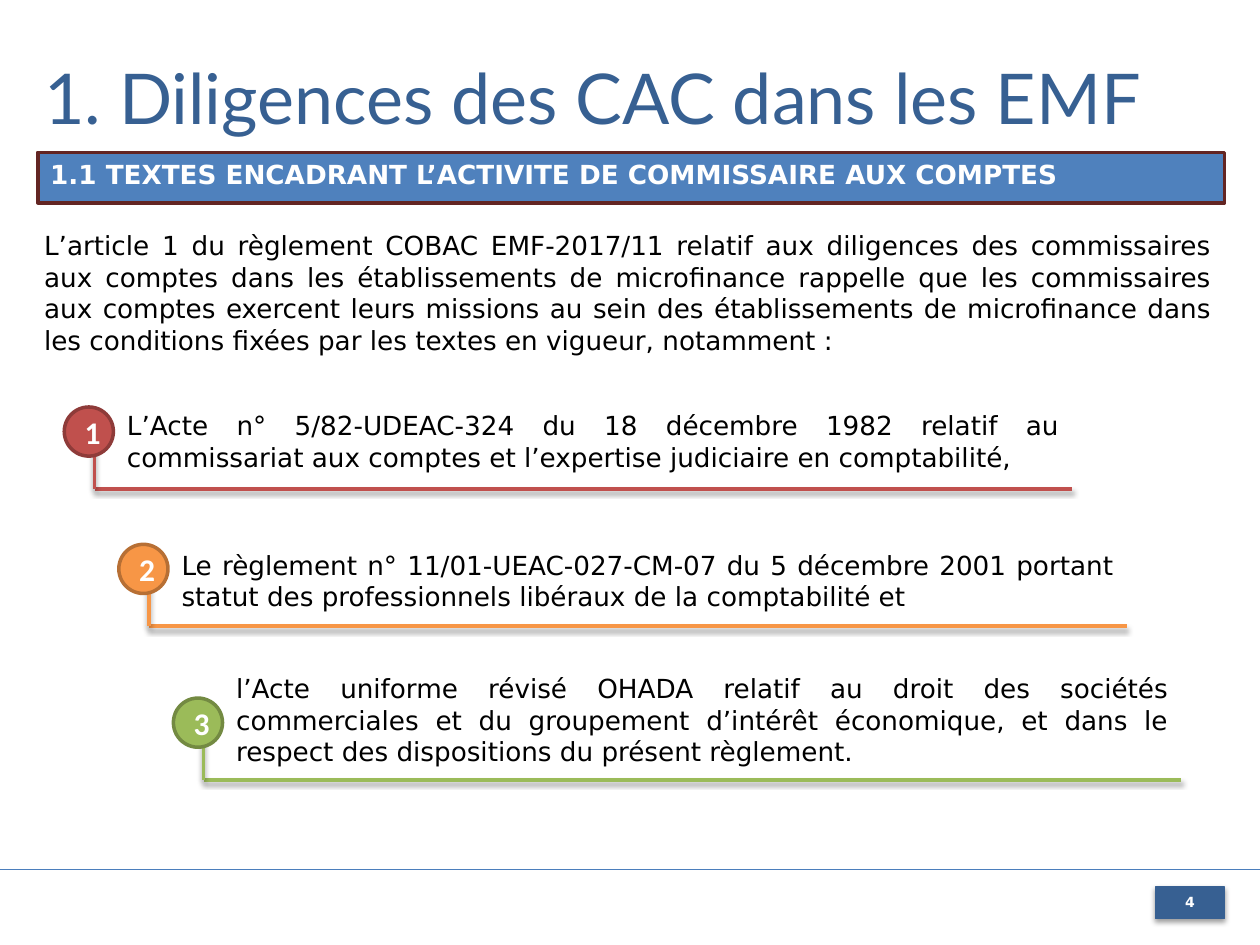
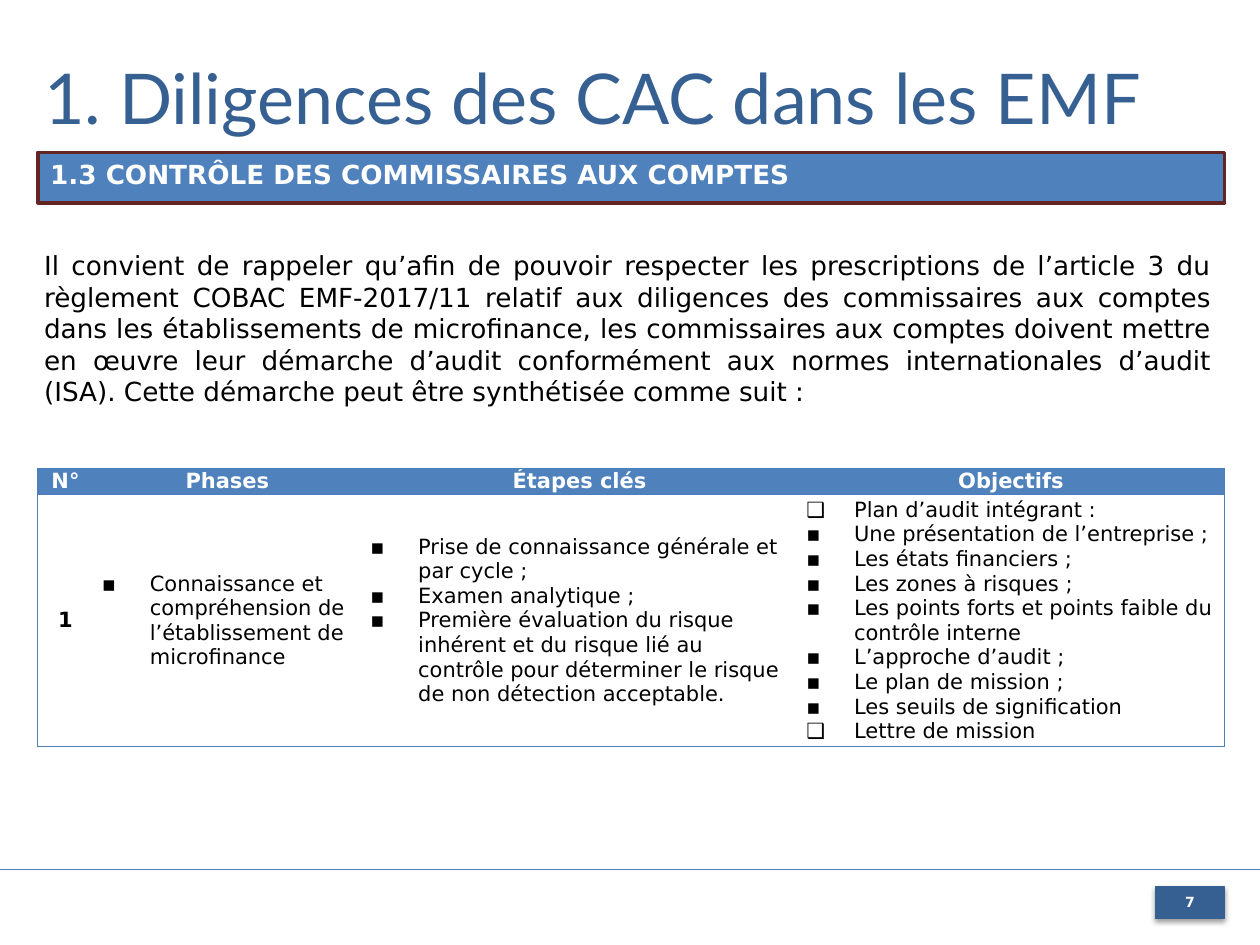
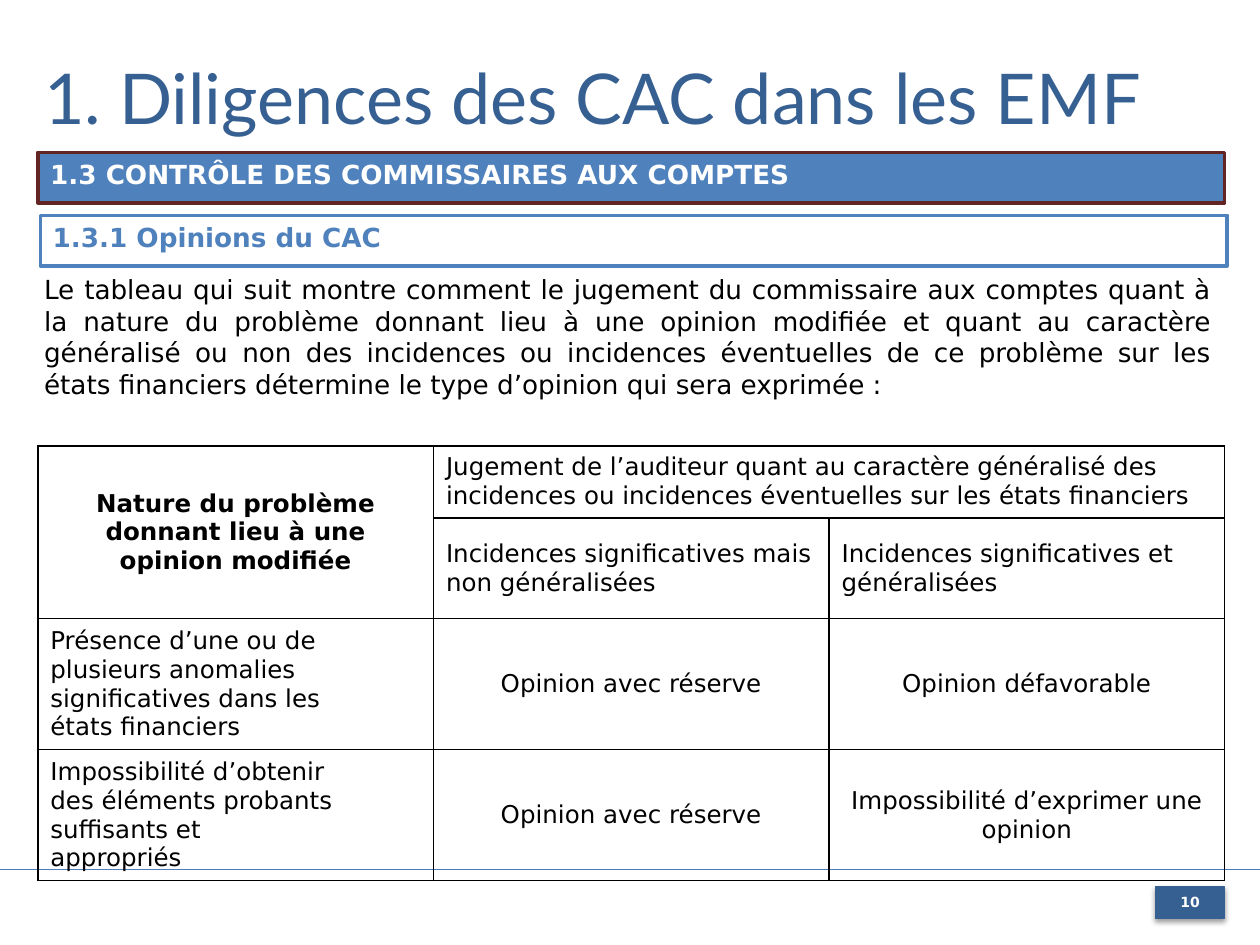
import pptx
import pptx.dml.color
import pptx.enum.shapes
import pptx.enum.text
import pptx.oxml.ns
import pptx.util
from lxml import etree

RGB = pptx.dml.color.RGBColor
Pt = pptx.util.Pt
qn = pptx.oxml.ns.qn
Shape = pptx.enum.shapes.MSO_SHAPE
Align = pptx.enum.text.PP_ALIGN
Anchor = pptx.enum.text.MSO_ANCHOR

WHITE = RGB(0xFF, 0xFF, 0xFF)
BLACK = RGB(0x00, 0x00, 0x00)
NAVY = RGB(0x37, 0x60, 0x92)
BLUE = RGB(0x4F, 0x81, 0xBD)
RULE_BLUE = RGB(0x4B, 0x7E, 0xBC)
MAROON = RGB(0x63, 0x25, 0x23)
RED = RGB(0xC0, 0x50, 0x4D)
DARK_RED = RGB(0x8E, 0x3B, 0x39)
ORANGE = RGB(0xF7, 0x96, 0x46)
DARK_ORANGE = RGB(0xB7, 0x6F, 0x34)
GREEN = RGB(0x9B, 0xBB, 0x59)
DARK_GREEN = RGB(0x73, 0x8A, 0x42)

TEXT_FONT = "DejaVu Sans"
TITLE_FONT = "Lato"
NUMBER_FONT = "Calibri"
BULLETS = "▪❑"
GRID_COLUMNS, GRID_ROWS = 100, 75
LEFT, WIDTH = 3, 94.2
PLAIN_TABLE = "{2D5ABB26-0587-4C30-8999-92F81FD0307C}"

TITLE = "1. Diligences des CAC dans les EMF"
CONTROL = "1.3 CONTRÔLE DES COMMISSAIRES AUX COMPTES"

TEXTS_INTRO = "L’article 1 du règlement COBAC EMF-2017/11 relatif aux diligences des commissaires aux comptes dans les établissements de microfinance rappelle que les commissaires aux comptes exercent leurs missions au sein des établissements de microfinance dans les conditions fixées par les textes en vigueur, notamment :"
LAWS = [
    ("L’Acte n° 5/82-UDEAC-324 du 18 décembre 1982 relatif au commissariat aux comptes et l’expertise judiciaire en comptabilité,",
     RED, DARK_RED, 38.8, 32),
    ("Le règlement n° 11/01-UEAC-027-CM-07 du 5 décembre 2001 portant statut des professionnels libéraux de la comptabilité et",
     ORANGE, DARK_ORANGE, 49.7, 43.1),
    ("l’Acte uniforme révisé OHADA relatif au droit des sociétés commerciales et du groupement d’intérêt économique, et dans le respect des dispositions du présent règlement.",
     GREEN, DARK_GREEN, 61.9, 52.9),
]

PHASES_INTRO = "Il convient de rappeler qu’afin de pouvoir respecter les prescriptions de l’article 3 du règlement COBAC EMF-2017/11 relatif aux diligences des commissaires aux comptes dans les établissements de microfinance, les commissaires aux comptes doivent mettre en œuvre leur démarche d’audit conformément aux normes internationales d’audit (ISA). Cette démarche peut être synthétisée comme suit :"
PHASES = [
    ["N°", "Phases", "Étapes clés", "Objectifs"],
    ["1",
     "▪Connaissance et compréhension de l’établissement de microfinance",
     "▪Prise de connaissance générale et par cycle ;\n"
     "▪Examen analytique ;\n"
     "▪Première évaluation du risque inhérent et du risque lié au contrôle pour déterminer le risque de non détection acceptable.",
     "❑Plan d’audit intégrant :\n"
     "▪Une présentation de l’entreprise ;\n"
     "▪Les états financiers ;\n"
     "▪Les zones à risques ;\n"
     "▪Les points forts et points faible du contrôle interne\n"
     "▪L’approche d’audit ;\n"
     "▪Le plan de mission ;\n"
     "▪Les seuils de signification\n"
     "❑Lettre de mission"],
]

OPINIONS_INTRO = "Le tableau qui suit montre comment le jugement du commissaire aux comptes quant à la nature du problème donnant lieu à une opinion modifiée et quant au caractère généralisé ou non des incidences ou incidences éventuelles de ce problème sur les états financiers détermine le type d’opinion qui sera exprimée :"
OPINIONS = [
    ["Nature du problème\ndonnant lieu à une\nopinion modifiée",
     "Jugement de l’auditeur quant au caractère généralisé des incidences ou incidences éventuelles sur les états financiers",
     ""],
    ["", "Incidences significatives mais non généralisées",
     "Incidences significatives et\ngénéralisées"],
    ["Présence d’une ou de\nplusieurs anomalies\nsignificatives dans les\nétats financiers",
     "Opinion avec réserve", "Opinion défavorable"],
    ["Impossibilité d’obtenir\ndes éléments probants\nsuffisants et\nappropriés",
     "Opinion avec réserve", "Impossibilité d’exprimer une\nopinion"],
]


def write(frame, text, size=15, font=TEXT_FONT, color=BLACK, bold=False, align=Align.LEFT):
    for index, line in enumerate(text.split("\n")):
        para = frame.add_paragraph() if index else frame.paragraphs[0]
        para.alignment = align
        para.space_before = Pt(0)
        properties = para._p.get_or_add_pPr()
        if line[0] in BULLETS:
            indent = pptx.util.Inches(0.38)
            properties.set("marL", str(indent))
            properties.set("indent", str(-indent))
            etree.SubElement(properties, qn("a:buFont"), typeface=TEXT_FONT)
            etree.SubElement(properties, qn("a:buChar"), char=line[0])
            line = line[1:]
        else:
            properties.set("marL", "0")
            properties.set("indent", "0")
            etree.SubElement(properties, qn("a:buNone"))
        span = para.add_run()
        span.text = line
        span.font.size = Pt(size)
        span.font.name = font
        span.font.bold = bold
        span.font.color.rgb = color


def set_effects(shape, shadow):
    effects = etree.SubElement(shape._element.spPr, qn("a:effectLst"))
    if shadow:
        outer = etree.SubElement(effects, qn("a:outerShdw"), blurRad=str(Pt(3.1)),
                                 dist=str(Pt(1.6)), dir="5400000", rotWithShape="0")
        tint = etree.SubElement(outer, qn("a:srgbClr"), val=str(BLACK))
        etree.SubElement(tint, qn("a:alpha"), val="38000")


def set_borders(cell, sides, color, width):
    properties = cell._tc.get_or_add_tcPr()
    for side in "LRTB":
        line = etree.SubElement(properties, qn("a:ln" + side), w=str(Pt(width)))
        if side in sides:
            fill = etree.SubElement(line, qn("a:solidFill"))
            etree.SubElement(fill, qn("a:srgbClr"), val=str(color))
        else:
            etree.SubElement(line, qn("a:noFill"))


class Composer:
    def __init__(self):
        self.deck = pptx.Presentation()
        self.deck.slide_width = pptx.util.Inches(10)
        self.deck.slide_height = pptx.util.Inches(7.5)
        self.page = None

    def across(self, columns):
        return round(self.deck.slide_width * columns / GRID_COLUMNS)

    def down(self, rows):
        return round(self.deck.slide_height * rows / GRID_ROWS)

    def area(self, left, top, width, height):
        return self.across(left), self.down(top), self.across(width), self.down(height)

    def start_page(self, number, heading, intro, intro_top, intro_height):
        self.page = self.deck.slides.add_slide(self.deck.slide_layouts[1])
        self.fill_placeholder(0, TITLE, 3.8, 7.7, size=40, font=TITLE_FONT, color=NAVY)
        self.fill_placeholder(1, intro, intro_top, intro_height, align=Align.JUSTIFY)
        self.line((0, 69), (100, 69), RULE_BLUE, 0.75)
        self.shape(Shape.RECTANGLE, (91.7, 70.4, 5.5, 2.5), NAVY, NAVY, 0.75, str(number),
                   shadow=True, size=8, color=WHITE, bold=True, align=Align.CENTER)
        self.band(heading, LEFT, 12.1, BLUE, MAROON, WHITE)

    def fill_placeholder(self, index, text, top, height, **style):
        box = self.page.placeholders[index]
        box.left, box.top, box.width, box.height = self.area(2.5, top, 94.7, height)
        frame = box.text_frame
        frame.auto_size = pptx.enum.text.MSO_AUTO_SIZE.NONE
        frame.vertical_anchor = Anchor.TOP
        write(frame, text, **style)

    def shape(self, kind, place, fill, border, width, text,
              anchor=Anchor.TOP, shadow=False, **style):
        box = self.page.shapes.add_shape(kind, *self.area(*place))
        box.fill.solid()
        box.fill.fore_color.rgb = fill
        box.line.color.rgb = border
        box.line.width = Pt(width)
        set_effects(box, shadow)
        box.text_frame.vertical_anchor = anchor
        write(box.text_frame, text, **style)
        return box

    def band(self, text, left, top, fill, border, color):
        self.shape(Shape.RECTANGLE, (left, top, WIDTH, 4), fill, border, 2, text,
                   color=color, bold=True, align=Align.JUSTIFY)

    def line(self, start, end, color, width, shadow=False):
        line = self.page.shapes.add_connector(
            pptx.enum.shapes.MSO_CONNECTOR.STRAIGHT,
            self.across(start[0]), self.down(start[1]), self.across(end[0]), self.down(end[1]))
        line.line.color.rgb = color
        line.line.width = Pt(width)
        set_effects(line, shadow)

    def text(self, text, place, **style):
        box = self.page.shapes.add_textbox(*self.area(*place))
        box.text_frame.word_wrap = True
        write(box.text_frame, text, **style)

    def numbered_step(self, number, text, color, border, base, text_top):
        left = 5.1 + 4.33 * (number - 1)
        corner = (left + 2.4, base)
        self.text(text, (left + 4, text_top, 76, 7), align=Align.JUSTIFY)
        self.line(corner, (left + 80, base), color, 2, shadow=True)
        self.line(corner, (left + 2.4, base - 4.2), color, 2, shadow=True)
        disc = self.shape(Shape.FLOWCHART_CONNECTOR, (left, base - 6.5, 3.9, 3.9), color, border, 2,
                          str(number), anchor=Anchor.MIDDLE, size=18, font=NUMBER_FONT,
                          color=WHITE, bold=True, align=Align.CENTER)
        disc.text_frame.margin_left = self.across(0.6)
        disc.text_frame.margin_right = 0

    def table(self, top, widths, heights):
        holder = self.page.shapes.add_table(
            len(heights), len(widths), *self.area(LEFT, top, sum(widths), sum(heights)))
        table = holder.table
        table.first_row = table.horz_banding = False
        table._tbl.tblPr.find(qn("a:tableStyleId")).text = PLAIN_TABLE
        for column, width in zip(table.columns, widths):
            column.width = self.across(width)
        for row, height in zip(table.rows, heights):
            row.height = self.down(height)
        return table

    def phases_table(self):
        table = self.table(37.2, [4.4, 21.3, 34.6, 33.9], [2.06, 20])
        last = len(PHASES[0]) - 1
        for row, texts in enumerate(PHASES):
            for column, text in enumerate(texts):
                cell = table.cell(row, column)
                sides = "T" + "B" * row + "L" * (column == 0) + "R" * (column == last)
                set_borders(cell, sides, RULE_BLUE, 0.75)
                cell.margin_left = cell.margin_right = self.across(0.7)
                cell.margin_top = cell.margin_bottom = 0
                header = row == 0
                if header:
                    cell.fill.solid()
                    cell.fill.fore_color.rgb = BLUE
                else:
                    cell.fill.background()
                    cell.vertical_anchor = Anchor.MIDDLE
                write(cell.text_frame, text, size=12, color=WHITE if header else BLACK,
                      bold=header or column == 0,
                      align=Align.CENTER if header or column == 0 else Align.LEFT)

    def opinions_table(self):
        table = self.table(35.4, [WIDTH / 3] * 3, [5.7, 8, 10.4, 10.4])
        table.cell(0, 0).merge(table.cell(1, 0))
        table.cell(0, 1).merge(table.cell(0, 2))
        for row, texts in enumerate(OPINIONS):
            for column, text in enumerate(texts):
                cell = table.cell(row, column)
                set_borders(cell, "LRTB", BLACK, 1)
                cell.fill.background()
                if text:
                    corner = row == column == 0
                    verdict = row > 1 and column > 0
                    cell.vertical_anchor = Anchor.TOP if (row, column) == (0, 1) else Anchor.MIDDLE
                    write(cell.text_frame, text, size=14, bold=corner,
                          align=Align.CENTER if corner or verdict else Align.LEFT)


def main():
    composer = Composer()
    composer.start_page(4, "1.1 TEXTES ENCADRANT L’ACTIVITE DE COMMISSAIRE AUX COMPTES",
                        TEXTS_INTRO, 17.7, 11.1)
    for number, law in enumerate(LAWS, 1):
        composer.numbered_step(number, *law)

    composer.start_page(7, CONTROL, PHASES_INTRO, 19.3, 13.6)
    composer.phases_table()

    composer.start_page(10, CONTROL, OPINIONS_INTRO, 21.2, 11.1)
    composer.opinions_table()
    composer.band("1.3.1 Opinions du CAC", 3.2, 17.1, WHITE, BLUE, BLUE)

    composer.deck.save("out.pptx")


if __name__ == "__main__":
    main()
